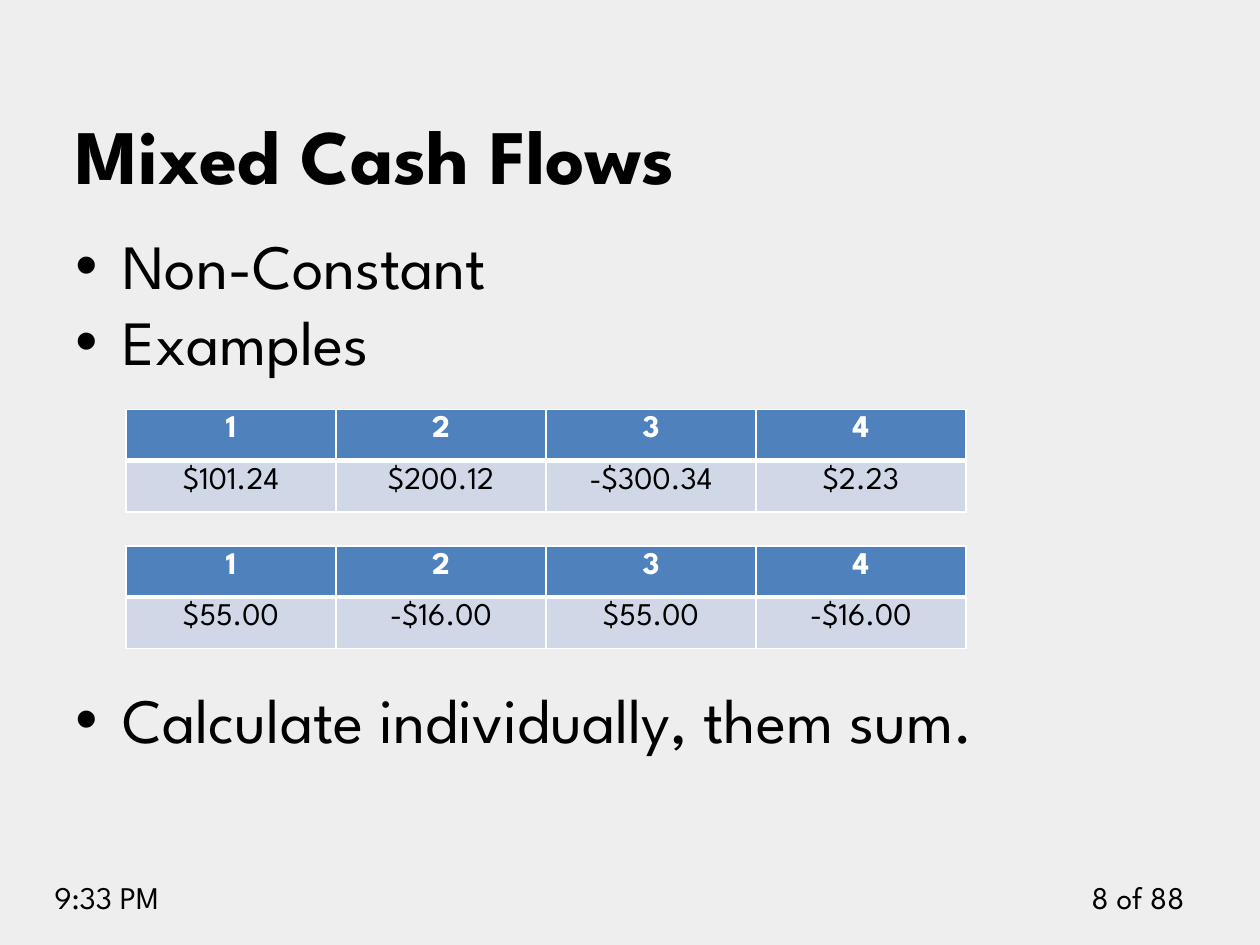
"""Build the Mixed Cash Flows slide with two cash flow tables."""
from lxml import etree
from pptx import Presentation
from pptx.dml.color import RGBColor
from pptx.enum import text
from pptx.oxml import ns
from pptx.util import Pt

TITLE = "Mixed Cash Flows"
BULLETS = [("Non-Constant", 0), ("Examples", 7.2), ("Calculate individually, them sum.", 180)]
PERIODS = ["1", "2", "3", "4"]
TABLES = [
    (312, ["$55.00", "-$16.00", "$55.00", "-$16.00"]),
    (234, ["$101.24", "$200.12", "-$300.34", "$2.23"]),
]
FOOTERS = [
    ("8 of 88", (600, 498, 84, 29), text.PP_ALIGN.RIGHT),
    ("9:33 PM", (24, 498, 114, 29), text.PP_ALIGN.LEFT),
]
TABLE_LEFT, COLUMN_WIDTH, ROW_HEIGHT = 72, 120, 29.25
BULLET_INDENT = 27

BLACK = RGBColor(0, 0, 0)
WHITE = RGBColor(255, 255, 255)
BACKGROUND = RGBColor(0xEE, 0xEE, 0xEE)
HEADER = RGBColor(0x4F, 0x81, 0xBD)
BAND = RGBColor(0xD0, 0xD8, 0xE8)

BASE = {"name": "League Spartan", "bold": False}
TITLE_FONT = BASE | {"size": Pt(44), "bold": True, "color": BLACK}
BODY_FONT = BASE | {"size": Pt(36), "color": BLACK}
SMALL_FONT = BASE | {"size": Pt(18), "color": BLACK}
HEADER_FONT = SMALL_FONT | {"bold": True, "color": WHITE}


def write(para, words, style, align=text.PP_ALIGN.LEFT):
    para.alignment = align
    span = para.add_run()
    span.text = words
    for key, value in style.items():
        if key == "color":
            span.font.color.rgb = value
        else:
            setattr(span.font, key, value)


def add_box(page, place):
    box = page.shapes.add_textbox(*map(Pt, place))
    box.text_frame.word_wrap = True
    return box.text_frame


def add_bullet(para):
    props = para._p.get_or_add_pPr()
    props.set("marL", str(Pt(BULLET_INDENT)))
    props.set("indent", str(-Pt(BULLET_INDENT)))
    etree.SubElement(props, ns.qn("a:buFont")).set("typeface", "Arial")
    etree.SubElement(props, ns.qn("a:buChar")).set("char", "•")


def set_borders(cell, bottom):
    props = cell._tc.get_or_add_tcPr()
    widths = {"a:lnL": 1, "a:lnR": 1, "a:lnT": 1, "a:lnB": bottom}
    for index, (tag, width) in enumerate(widths.items()):
        line = etree.Element(ns.qn(tag), w=str(Pt(width)))
        fill = etree.SubElement(line, ns.qn("a:solidFill"))
        etree.SubElement(fill, ns.qn("a:srgbClr")).set("val", str(WHITE))
        props.insert(index, line)


def add_cash_table(page, top, flows):
    rows = [(PERIODS, HEADER_FONT, HEADER, 3), (flows, SMALL_FONT, BAND, 1)]
    place = (TABLE_LEFT, top, COLUMN_WIDTH * len(PERIODS), ROW_HEIGHT * len(rows))
    table = page.shapes.add_table(len(rows), len(PERIODS), *map(Pt, place)).table
    for r, (values, style, color, bottom) in enumerate(rows):
        for c, value in enumerate(values):
            cell = table.cell(r, c)
            cell.fill.solid()
            cell.fill.fore_color.rgb = color
            set_borders(cell, bottom)
            write(cell.text_frame.paragraphs[0], value, style, text.PP_ALIGN.CENTER)


def main():
    deck = Presentation()
    deck.slide_width, deck.slide_height = Pt(720), Pt(540)
    page = deck.slides.add_slide(deck.slide_layouts[5])
    page.background.fill.solid()
    page.background.fill.fore_color.rgb = BACKGROUND

    for words, place, align in FOOTERS:
        write(add_box(page, place).paragraphs[0], words, SMALL_FONT, align)

    body = add_box(page, (36, 126, 648, 356.4))
    body.margin_top = Pt(10.8)
    for index, (words, gap) in enumerate(BULLETS):
        para = body.add_paragraph() if index else body.paragraphs[0]
        add_bullet(para)
        para.line_spacing = Pt(36)
        para.space_before = Pt(gap)
        write(para, words, BODY_FONT)

    title = page.shapes.title
    title.left, title.top, title.width, title.height = map(Pt, (36, 28, 648, 90))
    title.text_frame.vertical_anchor = text.MSO_ANCHOR.BOTTOM
    write(title.text_frame.paragraphs[0], TITLE, TITLE_FONT)

    for top, flows in TABLES:
        add_cash_table(page, top, flows)
    deck.save("out.pptx")


if __name__ == "__main__":
    main()
